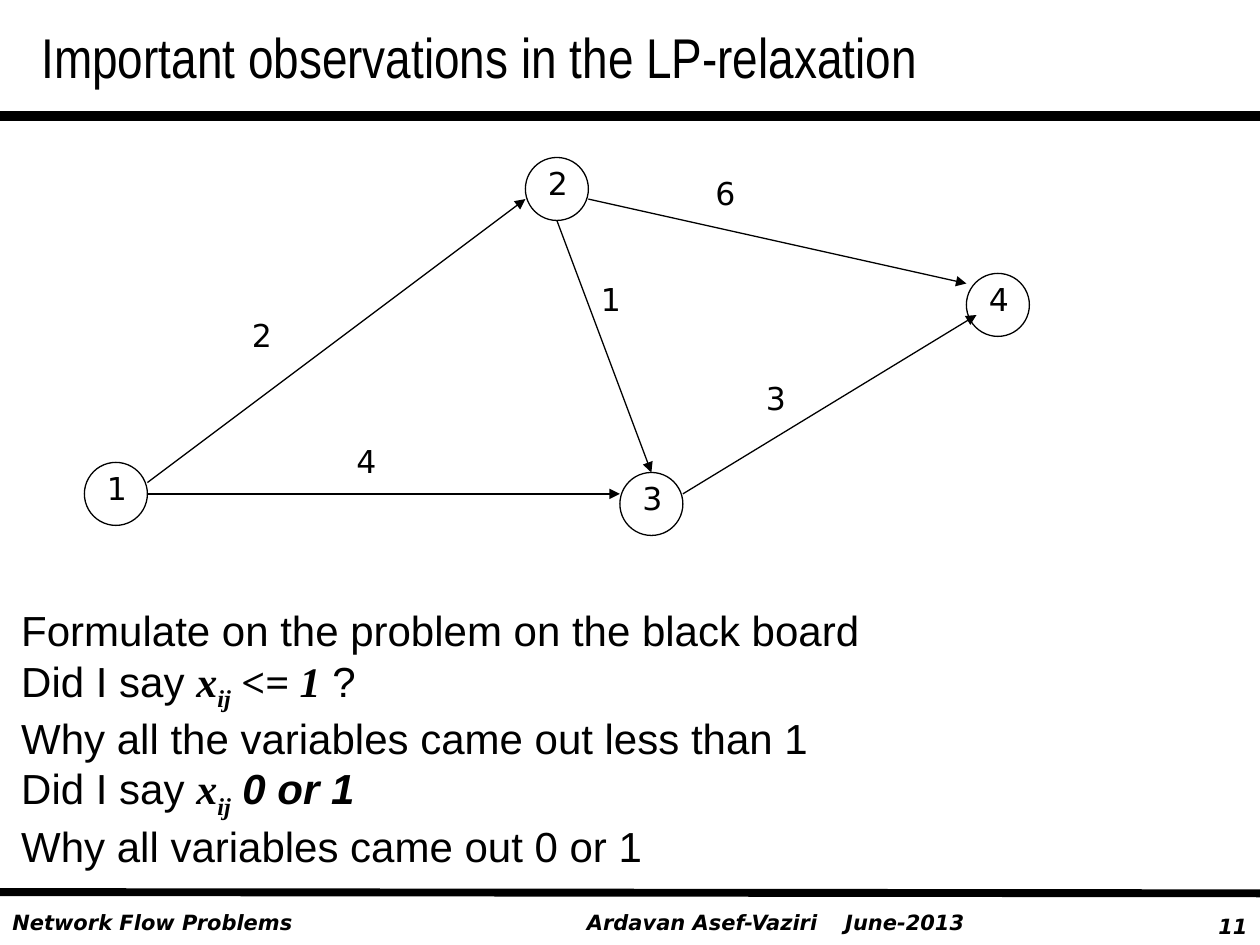
import pptx
import pptx.dml.color
import pptx.enum.shapes
import pptx.enum.text
import pptx.oxml
import pptx.oxml.ns
import pptx.util

Inches = pptx.util.Inches
Pt = pptx.util.Pt
COLORS = {"ink": "000000"}
INK = pptx.dml.color.RGBColor.from_string(COLORS["ink"])
RIGHT = pptx.enum.text.PP_ALIGN.RIGHT
DRAWING_NS = pptx.oxml.ns.nsdecls("a")

presentation = pptx.Presentation()
presentation.slide_width = Inches(10)
presentation.slide_height = Inches(7.5)
slide = presentation.slides.add_slide(presentation.slide_layouts[6])
shapes = slide.shapes


def write(paragraph, text, font="DejaVu Sans", size=18, bold=False, italic=False, baseline=0):
    """Append one formatted run; baseline is a percentage, negative for subscript."""
    run = paragraph.add_run()
    run.text = text
    run.font.name = font
    run.font.size = Pt(size)
    run.font.bold = bold
    run.font.italic = italic
    run.font.color.rgb = INK
    if baseline:
        run.font._element.set("baseline", str(baseline * 1000))


def add_text_frame(left, top, width, height, wrap=False):
    box = shapes.add_textbox(Inches(left), Inches(top), Inches(width), Inches(height))
    box.text_frame.word_wrap = wrap
    return box.text_frame


# Footer
footer_items = [
    ("11", 9.25, 7.2, 0.75),
    ("Ardavan Asef-Vaziri\tJune-2013", 4.56, 7.17, 3.35),
    ("Network Flow Problems", 0, 7.17, 4.67),
]
for text, left, top, width in footer_items:
    paragraph = add_text_frame(left, top, width, 0.3, wrap=True).paragraphs[0]
    if text == "11":
        paragraph.alignment = RIGHT
    if "\t" in text:
        tabs = pptx.oxml.parse_xml(
            f'<a:tabLst {DRAWING_NS}><a:tab pos="{Inches(2.05)}" algn="l"/></a:tabLst>'
        )
        paragraph._p.get_or_add_pPr().append(tabs)
    write(paragraph, text, size=12, bold=True, italic=True)

# Title
title = add_text_frame(0.23, 0.13, 8.24, 0.64)
write(title.paragraphs[0], "Important observations in the LP-relaxation", font="Arial Narrow", size=32)

# Horizontal rules and network arcs: start, end, line width, arrowhead
lines = [
    ((0, 0.92), (10, 0.92), 6, False),
    ((0, 7.08), (10, 7.09), 4.5, False),
    ((1.17, 3.83), (4.17, 1.58), 0.75, True),
    ((1.17, 3.92), (4.92, 3.92), 0.75, True),
    ((4.67, 1.58), (7.67, 2.25), 0.75, True),
    ((5.42, 3.92), (7.75, 2.5), 0.75, True),
    ((4.42, 1.75), (5.17, 3.75), 0.75, True),
]
for start, end, width, arrow in lines:
    connector = shapes.add_connector(
        pptx.enum.shapes.MSO_CONNECTOR.STRAIGHT, *map(Inches, start + end)
    )
    connector.line.color.rgb = INK
    connector.line.width = Pt(width)
    if arrow:
        tail = pptx.oxml.parse_xml(f'<a:tailEnd {DRAWING_NS} type="triangle"/>')
        connector.line._get_or_add_ln().append(tail)
    connector._element.spPr.append(pptx.oxml.parse_xml(f"<a:effectLst {DRAWING_NS}/>"))

# Network nodes
nodes = {"1": (0.67, 3.67), "2": (4.17, 1.25), "3": (4.92, 3.75), "4": (7.67, 2.17)}
node_size = 0.5
for name, (left, top) in nodes.items():
    node = shapes.add_shape(
        pptx.enum.shapes.MSO_SHAPE.OVAL,
        Inches(left), Inches(top), Inches(node_size), Inches(node_size),
    )
    node.shadow.inherit = False
    node.fill.background()
    node.line.color.rgb = INK
    node.line.width = Pt(0.75)
    write(add_text_frame(left + 0.08, top, 0.39, 0.5).paragraphs[0], name)

# Arc costs
arc_costs = [("2", 1.9, 2.46), ("6", 5.58, 1.33), ("1", 4.67, 2.17), ("4", 2.73, 3.46), ("3", 5.98, 2.96)]
for cost, left, top in arc_costs:
    write(add_text_frame(left, top, 0.39, 0.5).paragraphs[0], cost)

# Questions
plain = {"font": "Arial"}
strong = {"font": "Arial", "bold": True, "italic": True}
math_style = {"font": "Times New Roman", "bold": True, "italic": True}
variable = [("Did I say ", plain), ("x", math_style), ("ij", {**math_style, "baseline": -25})]
questions = [
    [("Formulate on the problem on the black board", plain)],
    variable + [(" <= 1", math_style), (" ?", plain)],
    [("Why all the variables came out less than 1", plain)],
    variable + [(" 0 or 1", strong)],
    [("Why all variables came out 0 or 1", plain)],
]
body = add_text_frame(0.07, 4.75, 6.92, 2.12)
for index, runs in enumerate(questions):
    paragraph = body.add_paragraph() if index else body.paragraphs[0]
    properties = paragraph._p.get_or_add_pPr()
    properties.set("marL", str(Inches(0.5)))
    properties.set("indent", str(Inches(-0.5)))
    for text, style in runs:
        write(paragraph, text, size=24, **style)

presentation.save("out.pptx")
